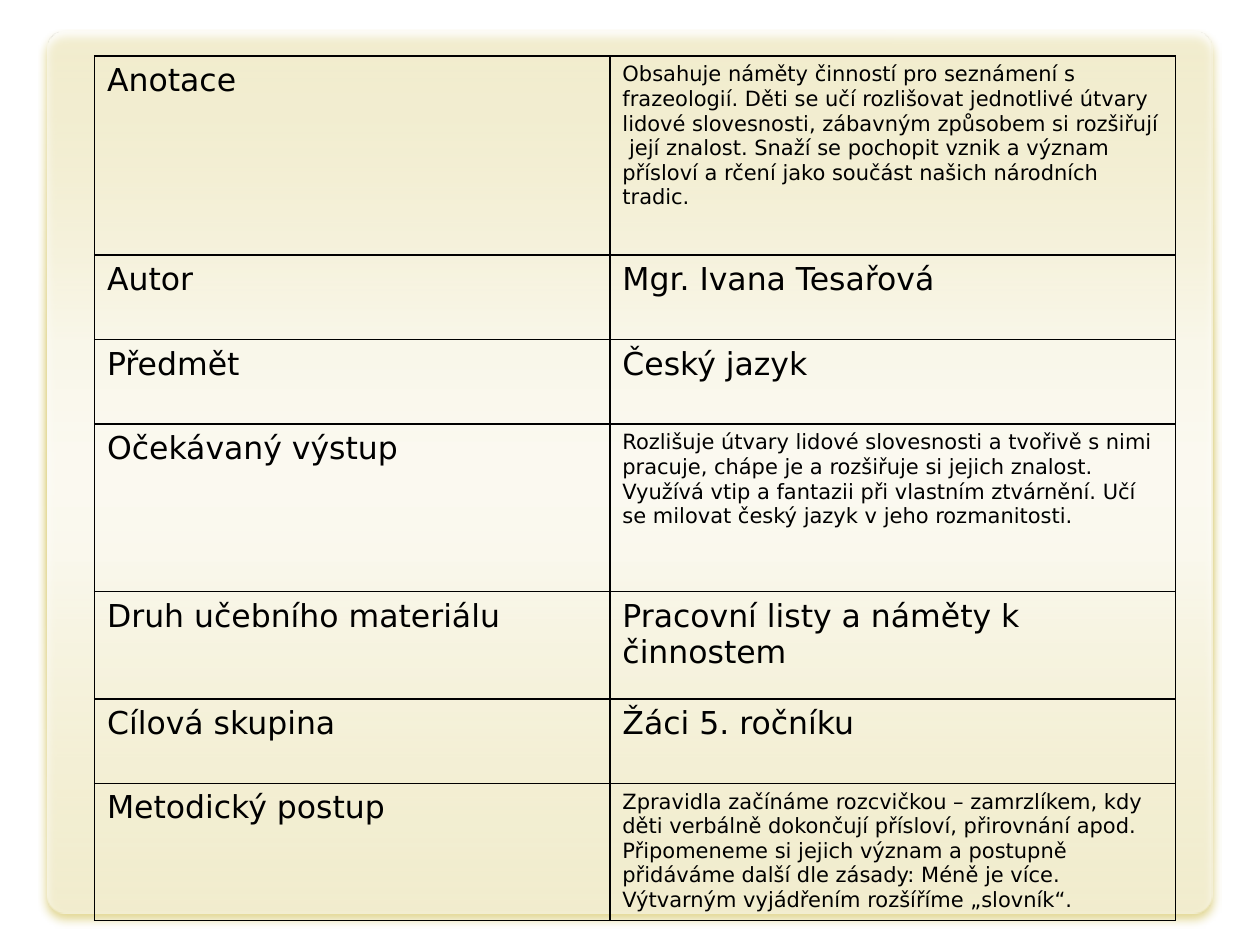
from lxml import etree
from pptx import Presentation
from pptx.dml.color import RGBColor
from pptx.enum.shapes import MSO_SHAPE
from pptx.oxml import parse_xml
from pptx.oxml.ns import nsdecls, qn
from pptx.util import Pt

ROUND = MSO_SHAPE.ROUNDED_RECTANGLE
BLACK = RGBColor(0x00, 0x00, 0x00)
WHITE = RGBColor(0xFF, 0xFF, 0xFF)
GOLD = RGBColor(0xC5, 0xAF, 0x25)
FONT = "DejaVu Sans"
LARGE, SMALL = 18, 12
STOPS = [(0, 50), (35, 87), (50, 92), (60, 89), (100, 55)]
COLS = [294.5, 323.3]
ROWS = [
    (113.8, "Anotace", SMALL,
     "Obsahuje náměty činností pro seznámení s frazeologií. Děti se učí "
     "rozlišovat jednotlivé útvary lidové slovesnosti, zábavným způsobem si "
     "rozšiřují  její znalost. Snaží se pochopit vznik a význam přísloví a "
     "rčení jako součást našich národních tradic."),
    (48.3, "Autor", LARGE, "Mgr. Ivana Tesařová"),
    (48.3, "Předmět", LARGE, "Český jazyk"),
    (95.8, "Očekávaný výstup", SMALL,
     "Rozlišuje útvary lidové slovesnosti a tvořivě s nimi pracuje, chápe je "
     "a rozšiřuje si jejich znalost. Využívá vtip a fantazii při vlastním "
     "ztvárnění. Učí se milovat český jazyk v jeho rozmanitosti."),
    (61.2, "Druh učebního materiálu", LARGE,
     "Pracovní listy a náměty k činnostem"),
    (48.3, "Cílová skupina", LARGE, "Žáci 5. ročníku"),
    (78.5, "Metodický postup", SMALL,
     "Zpravidla začínáme rozcvičkou – zamrzlíkem, kdy děti verbálně dokončují "
     "přísloví, přirovnání apod. Připomeneme si jejich význam a postupně "
     "přidáváme další dle zásady: Méně je více. Výtvarným vyjádřením "
     "rozšíříme „slovník“."),
]


def tint(color, alpha):
    """Return the XML of a colour with an opacity in percent."""
    return (f'<a:srgbClr val="{color}"><a:alpha val="{alpha * 1000}"/>'
            '</a:srgbClr>')


def add_panel(slide, left, top, width, height):
    """Add the rounded panel with its see-through gradient and gold shadow."""
    panel = slide.shapes.add_shape(
        ROUND, Pt(left), Pt(top), Pt(width), Pt(height))
    panel.adjustments[0] = 0.022
    panel.line.fill.background()
    panel.shadow.inherit = False
    props = panel.fill._xPr
    stops = "".join(f'<a:gs pos="{pos * 1000}">{tint(WHITE, alpha)}</a:gs>'
                    for pos, alpha in STOPS)
    props.find(qn("a:prstGeom")).addnext(parse_xml(
        f'<a:gradFill {nsdecls("a")} rotWithShape="1">'
        f'<a:gsLst>{stops}</a:gsLst>'
        '<a:lin ang="5400000" scaled="0"/></a:gradFill>'))
    props.find(qn("a:effectLst")).append(parse_xml(
        f'<a:outerShdw {nsdecls("a")} blurRad="{Pt(5)}" dist="{Pt(3.6)}" '
        f'dir="5400000" rotWithShape="0">{tint(GOLD, 90)}</a:outerShdw>'))


def add_edges(cell):
    """Draw a thin black line on all four sides of a cell."""
    props = cell._tc.get_or_add_tcPr()
    for spot, side in enumerate("LRTB"):
        edge = etree.Element(qn(f"a:ln{side}"), w=str(Pt(1)))
        fill = etree.SubElement(edge, qn("a:solidFill"))
        etree.SubElement(fill, qn("a:srgbClr"), val=str(BLACK))
        props.insert(spot, edge)


def set_cell(cell, text, size):
    """Fill one cell with black text on a clear ground."""
    cell.text_frame.text = text
    font = cell.text_frame.paragraphs[0].runs[0].font
    font.name = FONT
    font.size = Pt(size)
    font.color.rgb = BLACK
    cell.fill.background()
    add_edges(cell)


def add_facts(slide, left, top):
    """Add the table of facts about the lesson."""
    height = sum(row[0] for row in ROWS)
    table = slide.shapes.add_table(
        len(ROWS), len(COLS), Pt(left), Pt(top),
        Pt(sum(COLS)), Pt(height)).table
    table.first_row = False
    table.horz_banding = False
    for col, width in zip(table.columns, COLS):
        col.width = Pt(width)
    for row, (height, label, size, text) in zip(table.rows, ROWS):
        row.height = Pt(height)
        set_cell(row.cells[0], label, LARGE)
        set_cell(row.cells[1], text, size)


def main():
    """Build the slide and save it."""
    deck = Presentation()
    deck.slide_width, deck.slide_height = Pt(720), Pt(540)
    slide = deck.slides.add_slide(deck.slide_layouts[6])
    add_panel(slide, 27, 18, 666, 504)
    add_facts(slide, 54, 32)
    deck.save("out.pptx")


if __name__ == "__main__":
    main()
